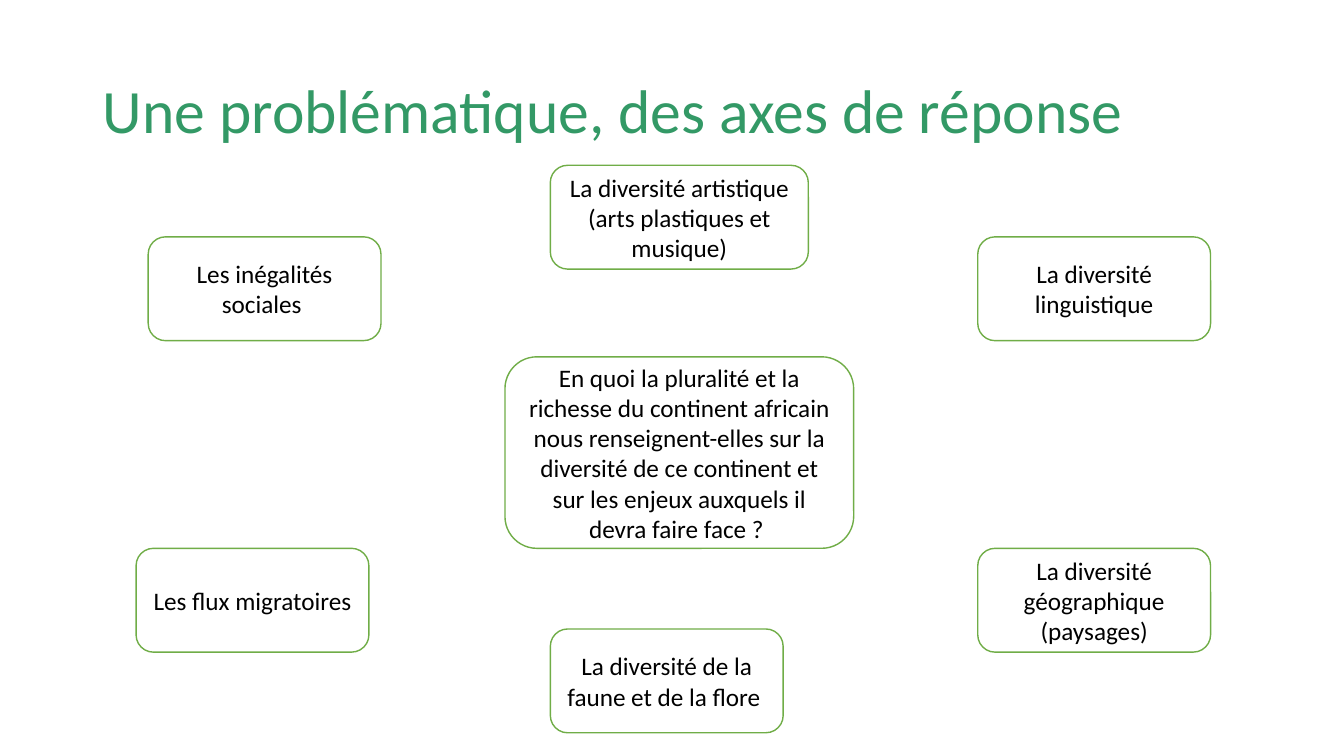
from dataclasses import dataclass

import pptx
import pptx.dml.color
import pptx.enum.shapes
import pptx.enum.text
import pptx.util
from pptx.enum.text import MSO_ANCHOR, PP_ALIGN
from pptx.util import Pt

FONT = "Calibri"
LEFT_X, MIDDLE_X, RIGHT_X = 105.84, 393.12, 698.4
UPPER_Y, LOWER_Y = 169.2, 391.68


@dataclass
class Bubble:
    text: str
    left: float
    top: float
    width: float = 166.32
    height: float = 74.16


BUBBLES = [
    Bubble(
        "En quoi la pluralité et la richesse du continent africain "
        "nous renseignent-elles sur la diversité de ce continent et "
        "sur les enjeux auxquels il devra faire face ? ",
        360.72, 254.88, 249.12, 136.8,
    ),
    Bubble("Les flux migratoires ", 97.2, LOWER_Y),
    Bubble(
        "La diversité artistique\n(arts plastiques et musique)",
        MIDDLE_X, 118.08, width=184.32,
    ),
    Bubble("La diversité de la faune et de la flore ", MIDDLE_X, 449.28),
    Bubble("La diversité géographique (paysages)", RIGHT_X, LOWER_Y),
    Bubble("La diversité linguistique", RIGHT_X, UPPER_Y),
    Bubble("Les inégalités sociales ", LEFT_X, UPPER_Y),
]


def color(value: str) -> pptx.dml.color.RGBColor:
    return pptx.dml.color.RGBColor.from_string(value)


def format_paragraph(para, size: float, font_color: str, alignment) -> None:
    para.alignment = alignment
    para.font.name = FONT
    para.font.size = Pt(size)
    para.font.color.rgb = color(font_color)


def format_title(title, text: str) -> None:
    title.left, title.top = Pt(66.24), Pt(28.8)
    title.width, title.height = Pt(828), Pt(104.4)
    frame = title.text_frame
    frame.text = text
    frame.word_wrap = True
    frame.vertical_anchor = MSO_ANCHOR.MIDDLE
    para = frame.paragraphs[0]
    para.line_spacing = 0.9
    format_paragraph(para, 44, "339966", PP_ALIGN.LEFT)


def draw_bubble(page, bubble: Bubble) -> None:
    shape = page.shapes.add_shape(
        pptx.enum.shapes.MSO_SHAPE.ROUNDED_RECTANGLE,
        Pt(bubble.left), Pt(bubble.top), Pt(bubble.width), Pt(bubble.height),
    )
    shape.shadow.inherit = False
    shape.fill.solid()
    shape.fill.fore_color.rgb = color("FFFFFF")
    shape.line.color.rgb = color("70AD47")
    shape.line.width = Pt(1)
    frame = shape.text_frame
    frame.text = bubble.text
    frame.word_wrap = True
    frame.vertical_anchor = MSO_ANCHOR.MIDDLE
    for para in frame.paragraphs:
        format_paragraph(para, 18, "000000", PP_ALIGN.CENTER)


def main() -> None:
    deck = pptx.Presentation()
    deck.slide_width, deck.slide_height = Pt(960), Pt(540)
    page = deck.slides.add_slide(deck.slide_layouts[5])
    format_title(page.shapes.title, "Une problématique, des axes de réponse")
    for bubble in BUBBLES:
        draw_bubble(page, bubble)
    deck.save("out.pptx")


if __name__ == "__main__":
    main()
